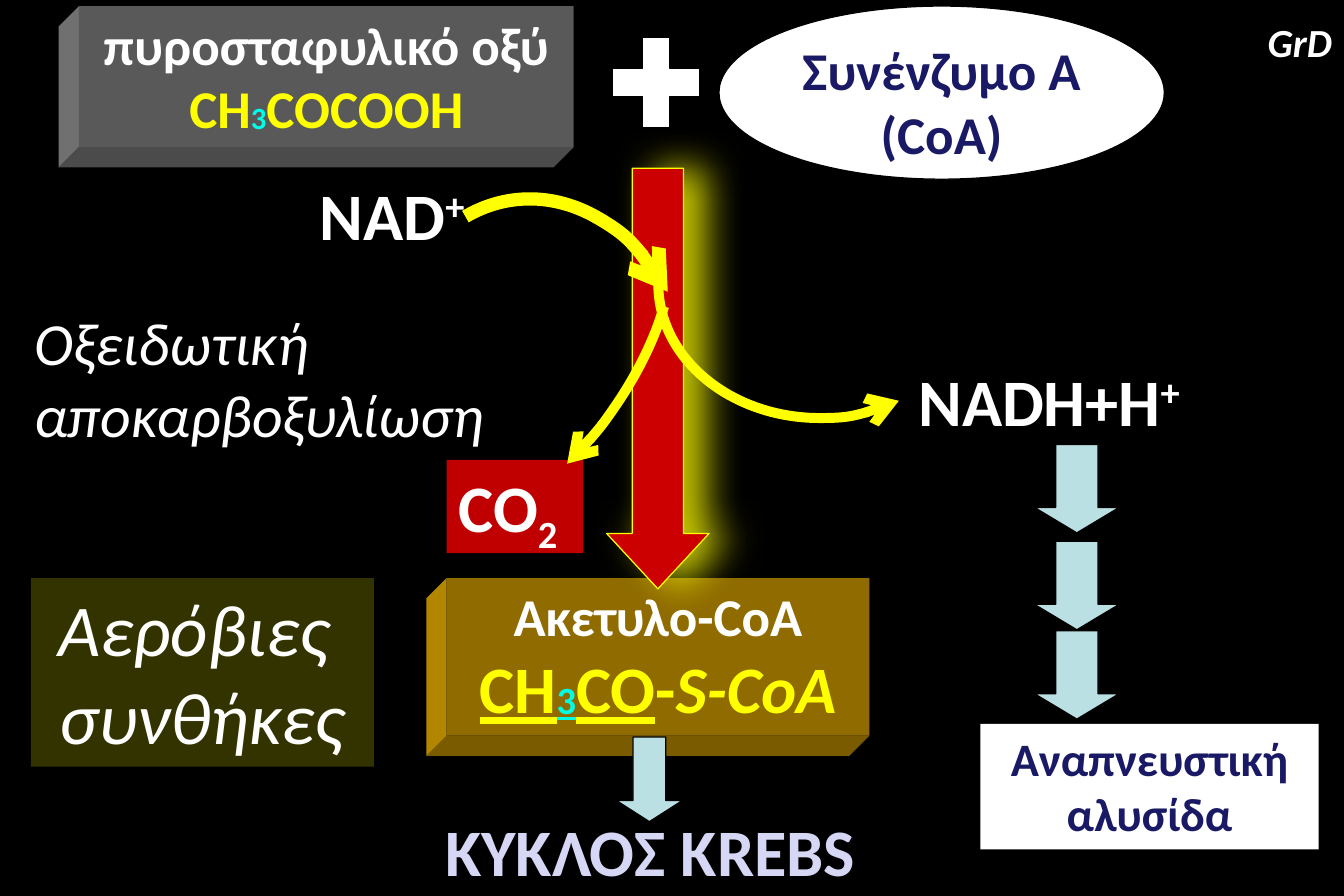
from lxml import etree
from pptx import Presentation
from pptx.dml.color import RGBColor
from pptx.enum.shapes import MSO_SHAPE
from pptx.enum.text import MSO_ANCHOR, PP_ALIGN
from pptx.oxml.ns import qn
from pptx.util import Cm, Pt

RECT, OVAL = MSO_SHAPE.RECTANGLE, MSO_SHAPE.OVAL
DOWN, ARC, PLUS = MSO_SHAPE.DOWN_ARROW, MSO_SHAPE.ARC, MSO_SHAPE.MATH_PLUS
LEFT, MID, TOP = PP_ALIGN.LEFT, PP_ALIGN.CENTER, MSO_ANCHOR.TOP
WHITE, BLACK, YELLOW = "FFFFFF", "000000", "FFFF00"
CYAN, NAVY, PALE = "00FEE7", "191966", "BBE0E3"

rgb = RGBColor.from_string


def paint(shape, fill, line=None, width=0.75):
    """Set fill and outline, None meaning neither, and drop the shadow."""
    shape.shadow.inherit = False
    for part, tone in ((shape.fill, fill), (shape.line.fill, line)):
        if tone:
            part.solid()
            part.fore_color.rgb = rgb(tone)
        else:
            part.background()
    if line:
        shape.line.width = Pt(width)


def write(shape, align, wrap, paras):
    """Each paragraph is a size and its runs: text, colour, style, baseline."""
    frame = shape.text_frame
    frame.word_wrap = wrap
    frame.vertical_anchor = TOP
    for num, (size, runs) in enumerate(paras):
        para = frame.add_paragraph() if num else frame.paragraphs[0]
        para.alignment = align
        for text, tone, style, base in runs:
            run = para.add_run()
            run.text = text
            font = run.font
            font.name, font.size = "Calibri", Pt(size)
            font.color.rgb = rgb(tone)
            font.bold, font.italic = "b" in style, "i" in style
            font.underline = "u" in style
            if base:
                run._r.get_or_add_rPr().set("baseline", str(base * 1000))


deck = Presentation()
deck.slide_width, deck.slide_height = Cm(28.58), Cm(19.05)
slide = deck.slides.add_slide(deck.slide_layouts[6])
slide.background.fill.solid()
slide.background.fill.fore_color.rgb = rgb(BLACK)
shapes = slide.shapes

# Slanted sides of the two raised boxes
ACETYL = (9.5, 12.29, 8.99, 3.35)
PYRUVIC = (1.68, 0.13, 10.52, 3)
DEPTH = 0.43
for (x, y, w, h), side, base in ((ACETYL, "B38600", "7A5B00"),
                                 (PYRUVIC, "707070", "4B4B4B")):
    low, out, sunk = y + h, x - DEPTH, y + h + DEPTH
    for tone, points in (
            (side, [(x, y), (out, y + DEPTH), (out, sunk), (x, low)]),
            (base, [(x, low), (out, sunk), (x + w - DEPTH, sunk), (x + w, low)])):
        ends = [(Cm(a), Cm(b)) for a, b in points]
        pen = shapes.build_freeform(*ends[0])
        pen.add_line_segments(ends[1:])
        paint(pen.convert_to_shape(), tone)

# Boxes and labels: kind, place, fill, outline, alignment, wrap, text
boxes = [
    (RECT, (9.17, 17.09, 9.32, 1.98), None, None, MID, False,
     [(40, [("ΚΥΚΛΟΣ KREBS", "D6D6F5", "b", 0)])]),
    (RECT, ACETYL, "8F6B00", None, MID, True,
     [(32, [("Ακετυλο-CoA", WHITE, "b", 0)]),
      (40, [("CH", YELLOW, "bu", 0), ("3", CYAN, "bu", -1),
            ("CO", YELLOW, "bu", 0), ("-", YELLOW, "b", 0),
            ("S-CoA", YELLOW, "bi", 0)])]),
    (RECT, (9.5, 9.78, 2.9, 1.98), "C00000", None, LEFT, True,
     [(40, [("CO", WHITE, "b", 0), ("2", WHITE, "b", -25)])]),
    (RECT, (19.28, 7.54, 6.65, 1.98), None, None, LEFT, True,
     [(40, [("NADH+H", WHITE, "b", 0), ("+", WHITE, "b", 30)])]),
    (RECT, (20.85, 15.39, 7.19, 2.67), WHITE, None, MID, True,
     [(28, [("Αναπνευστική αλυσίδα", NAVY, "b", 0)])]),
    (RECT, (6.55, 3.58, 3.81, 1.98), None, None, LEFT, True,
     [(40, [("NAD", WHITE, "b", 0), ("+", WHITE, "b", 30)])]),
    (RECT, (0.48, 6.38, 10.29, 3.35), BLACK, None, LEFT, True,
     [(36, [("Οξειδωτική", WHITE, "i", 0)]),
      (36, [("αποκαρβοξυλίωση", WHITE, "i", 0)])]),
    (RECT, (0.66, 12.29, 7.29, 4.01), "333300", None, MID, True,
     [(44, [("Αερόβιες ", WHITE, "i", 0)]),
      (44, [("συνθήκες", WHITE, "i", 0)])]),
    (RECT, PYRUVIC, "595959", None, MID, True,
     [(32, [("πυροσταφυλικό οξύ", WHITE, "b", 0)]),
      (32, [("CH", YELLOW, "b", 0), ("3", CYAN, "b", -1),
            ("COCOOH", YELLOW, "b", 0)])]),
    (OVAL, (15.29, 0.13, 9.47, 3.68), WHITE, BLACK, MID, True,
     [(32, [("Συνένζυμο Α (CoA)", NAVY, "b", 0)])]),
    (RECT, (26.7, 0.25, 1.88, 1.27), None, None, MID, False,
     [(24, [("GrD", WHITE, "bi", 0)])]),
]
for kind, place, fill, line, align, wrap, paras in boxes:
    box = shapes.add_shape(kind, *map(Cm, place))
    paint(box, fill, line)
    write(box, align, wrap, paras)

plus = shapes.add_shape(PLUS, Cm(12.7), Cm(0.46), Cm(2.51), Cm(2.59))
paint(plus, WHITE, BLACK)

# Block arrows, the last one being the main reaction
blocks = [((13.11, 15.67, 1.4, 1.8), 0.32, PALE, BLACK)]
blocks += [((22, y, 1.8, 1.88), 0.3, PALE, BLACK) for y in (9.45, 11.51, 13.41)]
blocks.append(((12.9, 3.58, 2.18, 8.94), 0.54, "CC0000", YELLOW))
for place, head, fill, line in blocks:
    arrow = shapes.add_shape(DOWN, *map(Cm, place))
    arrow.adjustments[0], arrow.adjustments[1] = 0.5, head
    paint(arrow, fill, line)

glow = etree.SubElement(
    arrow._element.spPr.find(qn("a:effectLst")), qn("a:outerShdw"),
    blurRad=str(Pt(24)), dist=str(Pt(13)), dir=str(359 * 60000),
    algn="ctr", rotWithShape="0")
tint = etree.SubElement(glow, qn("a:srgbClr"), val=YELLOW)
etree.SubElement(tint, qn("a:alpha"), val="78000")

# Curved arrows: place, turn, start and end angle, width, arrow end
curves = [
    ((8.05, 4.22, 6.81, 8.79), 353.8, 152.99, 194.95, 8, "a:tailEnd"),
    ((7.7, 5.82, 7.87, 3.56), 124.2, 127.34, 189.09, 6, "a:tailEnd"),
    ((14, 3.2, 6.86, 5.69), 0, 33.47, 109.26, 6, "a:headEnd"),
]
for place, turn, start, stop, width, end in curves:
    curve = shapes.add_shape(ARC, *map(Cm, place))
    curve.rotation = turn
    curve.adjustments[0], curve.adjustments[1] = start, stop
    paint(curve, None, YELLOW, width)
    etree.SubElement(curve.line._get_or_add_ln(), qn(end), type="arrow")

deck.save("out.pptx")
